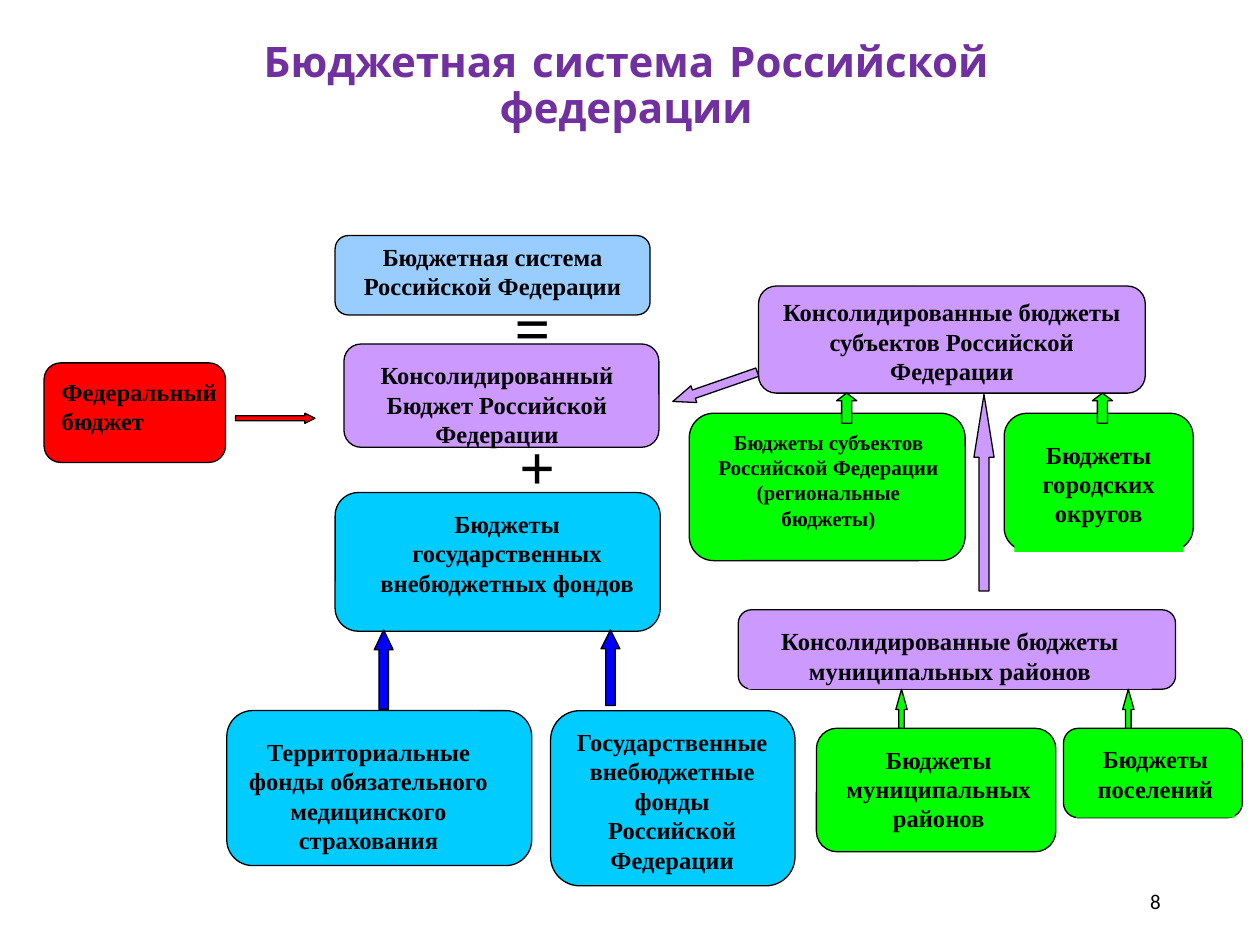
"""Build the slide that shows the structure of the Russian budget system."""
from dataclasses import dataclass
from typing import Optional

from pptx import Presentation
from pptx.dml.color import RGBColor
from pptx.enum.shapes import MSO_SHAPE
from pptx.enum.text import MSO_ANCHOR, PP_ALIGN
from pptx.util import Inches, Pt

CARD = MSO_SHAPE.FLOWCHART_ALTERNATE_PROCESS
RECTANGLE = MSO_SHAPE.RECTANGLE
ELLIPSE = MSO_SHAPE.OVAL
UP = MSO_SHAPE.UP_ARROW
RIGHT = MSO_SHAPE.RIGHT_ARROW
LEFT_ALIGN, CENTER, RIGHT_ALIGN = PP_ALIGN.LEFT, PP_ALIGN.CENTER, PP_ALIGN.RIGHT
TOP, MIDDLE = MSO_ANCHOR.TOP, MSO_ANCHOR.MIDDLE

BLACK, PURPLE = "000000", "7030A0"
SKY, LILAC, CYAN = "99CCFF", "CC99FF", "00CCFF"
RED, GREEN, BLUE = "FF0000", "00FF00", "0000FF"

Box = tuple[float, float, float, float]


@dataclass(frozen=True)
class Card:
    """A rounded budget card with its label."""
    box: Box
    fill: str
    text: str
    label_box: Optional[Box] = None
    label_filled: bool = True
    size: int = 14
    align: PP_ALIGN = CENTER


@dataclass(frozen=True)
class Arrow:
    """A block arrow between cards."""
    kind: MSO_SHAPE
    box: Box
    fill: str
    head: float
    rotation: float = 0


CARDS = [
    Card((2.66, 1.87, 2.5, 0.63), SKY, "Бюджетная система Российской Федерации",
         (2.58, 1.87, 2.66, 0.55), label_filled=False),
    Card((2.73, 2.73, 2.5, 0.82), LILAC, "Консолидированный Бюджет Российской Федерации",
         (2.81, 2.81, 2.27, 0.72)),
    Card((2.66, 3.91, 2.58, 1.1), CYAN, "Бюджеты государственных\nвнебюджетных фондов",
         (2.89, 3.99, 2.27, 0.94)),
    Card((4.37, 5.64, 1.94, 1.39), CYAN,
         "Государственные\nвнебюджетные фонды\nРоссийской Федерации",
         (4.45, 5.72, 1.77, 1.16)),
    Card((1.8, 5.64, 2.42, 1.23), CYAN,
         "Территориальные фонды обязательного медицинского страхования",
         (1.87, 5.8, 2.11, 1)),
    Card((0.35, 2.88, 1.44, 0.79), RED, "Федеральный\nбюджет",
         (0.39, 2.94, 1.72, 0.89), label_filled=False, align=LEFT_ALIGN),
    Card((6.02, 2.27, 3.07, 0.85), LILAC,
         "Консолидированные бюджеты субъектов Российской Федерации"),
    Card((5.86, 4.84, 3.47, 0.63), LILAC,
         "Консолидированные бюджеты\nмуниципальных районов", (5.94, 4.92, 3.2, 0.55)),
    Card((5.47, 3.28, 2.19, 1.17), GREEN,
         "Бюджеты субъектов\nРоссийской Федерации\n(региональные бюджеты)",
         (5.55, 3.36, 2.05, 1.1), label_filled=False, size=12),
    Card((7.97, 3.28, 1.5, 1.09), GREEN, "Бюджеты\nгородских округов",
         (8.05, 3.44, 1.34, 0.94)),
    Card((8.44, 5.78, 1.42, 0.71), GREEN, "Бюджеты поселений", (8.54, 5.86, 1.26, 0.63)),
    Card((6.48, 5.78, 1.9, 0.98), GREEN, "Бюджеты муниципальных районов",
         (6.56, 5.86, 1.78, 0.78)),
]

ARROWS = [
    Arrow(UP, (2.97, 5, 0.15, 0.63), BLUE, 1.05),
    Arrow(UP, (4.77, 5, 0.15, 0.6), BLUE, 1),
    Arrow(RIGHT, (1.87, 3.28, 0.63, 0.08), RED, 1),
    Arrow(RIGHT, (5.32, 3, 0.71, 0.14), LILAC, 1.26, 160.9),
    Arrow(RIGHT, (7.03, 3.83, 1.56, 0.16), LILAC, 3.12, 270),
    Arrow(UP, (6.64, 3.12, 0.16, 0.24), GREEN, 0.38),
    Arrow(UP, (8.67, 3.12, 0.16, 0.24), GREEN, 0.38),
    Arrow(UP, (7.11, 5.47, 0.09, 0.31), GREEN, 1.79),
    Arrow(UP, (8.91, 5.47, 0.09, 0.31), GREEN, 1.79),
]

SIGNS = [("=", (3.36, 2.41, 1.74, 0.7)), ("+", (3.36, 3.51, 1.82, 0.7))]


def color(value: str) -> RGBColor:
    """Turn a hex string into a colour."""
    return RGBColor.from_string(value)


def write(shape, text: str, *, size: int = 14, font: str = "Times New Roman",
          fill: str = BLACK, bold: bool = True, align: PP_ALIGN = CENTER,
          anchor: MSO_ANCHOR = TOP, spacing: float = 1) -> None:
    """Fill a shape with formatted text, one paragraph per line."""
    frame = shape.text_frame
    frame.text = text
    frame.word_wrap = True
    frame.vertical_anchor = anchor
    for paragraph in frame.paragraphs:
        paragraph.alignment = align
        paragraph.line_spacing = spacing
        paragraph.font.size = Pt(size)
        paragraph.font.name = font
        paragraph.font.bold = bold
        paragraph.font.color.rgb = color(fill)


def add_shape(slide, kind: MSO_SHAPE, box: Box, fill: Optional[str] = None,
              line: Optional[str] = None):
    """Add a preset shape without shadow."""
    shape = slide.shapes.add_shape(kind, *map(Inches, box))
    shape.shadow.inherit = False
    if fill:
        shape.fill.solid()
        shape.fill.fore_color.rgb = color(fill)
    else:
        shape.fill.background()
    if line:
        shape.line.color.rgb = color(line)
        shape.line.width = Pt(0.75)
    else:
        shape.line.fill.background()
    return shape


def add_card(slide, card: Card) -> None:
    """Draw a card and its label."""
    holder = add_shape(slide, CARD, card.box, card.fill, BLACK)
    if card.label_box:
        label_fill = card.fill if card.label_filled else None
        holder = add_shape(slide, RECTANGLE, card.label_box, label_fill)
    write(holder, card.text, size=card.size, align=card.align)


def add_arrow(slide, arrow: Arrow) -> None:
    """Draw a block arrow."""
    shape = add_shape(slide, arrow.kind, arrow.box, arrow.fill, BLACK)
    shape.adjustments[0] = 0.5
    shape.adjustments[1] = arrow.head
    shape.rotation = arrow.rotation


def add_sign(slide, sign: str, box: Box) -> None:
    """Draw an arithmetic sign in a vertically flipped ellipse."""
    shape = add_shape(slide, ELLIPSE, box)
    shape.element.spPr.xfrm.set("flipV", "1")
    write(shape, sign, size=36)


def main() -> None:
    """Build and save the presentation."""
    presentation = Presentation()
    presentation.slide_width, presentation.slide_height = Inches(10), Inches(7.5)
    slide = presentation.slides.add_slide(presentation.slide_layouts[5])

    title = slide.shapes.title
    title.left, title.top, title.width, title.height = map(Inches, (1.69, 0.28, 6.56, 0.47))
    write(title, "Бюджетная система Российской федерации", size=24,
          font="Comic Neue", fill=PURPLE, spacing=0.9)

    for card in CARDS:
        add_card(slide, card)
    for sign, box in SIGNS:
        add_sign(slide, sign, box)
    for arrow in ARROWS:
        add_arrow(slide, arrow)

    number = slide.shapes.add_textbox(*map(Inches, (7.06, 6.95, 2.25, 0.4)))
    write(number, "8", size=12, font="Calibri", bold=False, align=RIGHT_ALIGN, anchor=MIDDLE)

    presentation.save("out.pptx")


if __name__ == "__main__":
    main()
